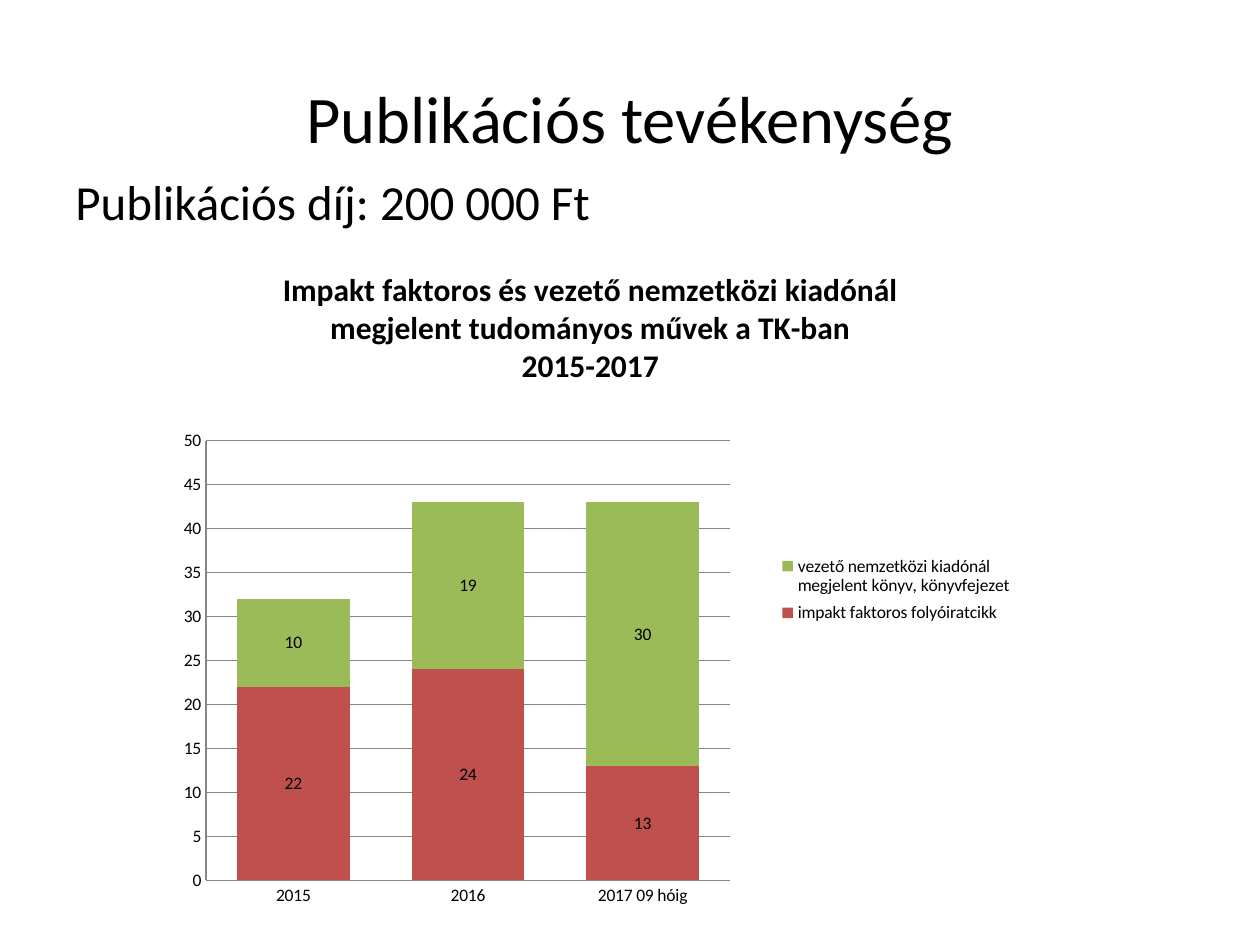
from lxml import etree
from pptx import Presentation
from pptx.chart.data import CategoryChartData
from pptx.dml.color import RGBColor
from pptx.enum import chart as ch, text
from pptx.oxml.ns import qn
from pptx.util import Inches, Pt

FONT = "Calibri"
BLACK = RGBColor(0x00, 0x00, 0x00)
GRAY = RGBColor(0x86, 0x86, 0x86)
RED = RGBColor(0xC0, 0x50, 0x4D)
GREEN = RGBColor(0x9B, 0xBB, 0x59)

CATEGORIES = ["2015", "2016", "2017 09 hóig"]
SERIES = [
    ("impakt faktoros folyóiratcikk", (22, 24, 13), RED),
    ("vezető nemzetközi kiadónál megjelent könyv, könyvfejezet", (10, 19, 30), GREEN),
]
CHART_TITLE = [
    "Impakt faktoros és vezető nemzetközi kiadónál megjelent tudományos művek a TK-ban",
    "2015-2017",
]


def style_font(font, size, bold=False):
    font.name = FONT
    font.size = Pt(size)
    font.bold = bold
    font.color.rgb = BLACK


def add_text(slide, box, words, size, align, anchor):
    tf = slide.shapes.add_textbox(*map(Inches, box)).text_frame
    tf.word_wrap = True
    tf.vertical_anchor = anchor
    p = tf.paragraphs[0]
    p.text = words
    p.alignment = align
    style_font(p.font, size)


def manual_layout(x, y, w, h, inner=False):
    """Return a c:layout element with fractions of the chart area."""
    layout = etree.Element(qn("c:layout"))
    manual = etree.SubElement(layout, qn("c:manualLayout"))
    values = [("layoutTarget", "inner")] if inner else []
    values += [("xMode", "edge"), ("yMode", "edge"),
               ("x", x), ("y", y), ("w", w), ("h", h)]
    for tag, value in values:
        etree.SubElement(manual, qn(f"c:{tag}")).set("val", str(value))
    return layout


def set_chart_title(chart):
    tf = chart.chart_title.text_frame
    chart.chart_title.include_in_layout = False
    for i, line in enumerate(CHART_TITLE):
        p = tf.paragraphs[0] if i == 0 else tf.add_paragraph()
        p.text = line
        style_font(p.font, 18, bold=True)


def style_axes(chart):
    value_axis = chart.value_axis
    value_axis.minimum_scale, value_axis.maximum_scale = 0, 50
    value_axis.major_unit = 5
    value_axis.has_major_gridlines = True
    for axis in (chart.category_axis, value_axis):
        axis.major_tick_mark = ch.XL_TICK_MARK.NONE
        axis.format.line.color.rgb = GRAY
    value_axis.major_gridlines.format.line.color.rgb = GRAY


def style_series(plot):
    plot.gap_width = 55
    plot.overlap = 100
    plot.vary_by_categories = False
    for series, (_, _, color) in zip(plot.series, SERIES):
        series.format.fill.solid()
        series.format.fill.fore_color.rgb = color
        labels = series.data_labels
        labels.show_value = True
        labels.position = ch.XL_LABEL_POSITION.CENTER
        style_font(labels.font, 10)


def place_parts(chart):
    area = chart.plots[0]._element.getparent()
    for old in area.findall(qn("c:layout")):
        area.remove(old)
    area.insert(0, manual_layout(0.06, 0.29, 0.6, 0.65, inner=True))
    legend = chart.legend._element
    for old in legend.findall(qn("c:layout")):
        legend.remove(old)
    legend.find(qn("c:legendPos")).addnext(manual_layout(0.71, 0.45, 0.28, 0.12))


def add_publication_chart(slide):
    data = CategoryChartData()
    data.categories = CATEGORIES
    for name, values, _ in SERIES:
        data.add_series(name, values)
    box = map(Inches, (1.22, 1.94, 6.93, 5.37))
    chart = slide.shapes.add_chart(ch.XL_CHART_TYPE.COLUMN_STACKED, *box, data).chart
    style_font(chart.font, 10)
    set_chart_title(chart)
    style_axes(chart)
    style_series(chart.plots[0])
    chart.has_legend = True
    chart.legend.position = ch.XL_LEGEND_POSITION.RIGHT
    chart.legend.include_in_layout = False
    place_parts(chart)


def main():
    prs = Presentation()
    prs.slide_width, prs.slide_height = Inches(10), Inches(7.5)
    slide = prs.slides.add_slide(prs.slide_layouts[6])
    add_text(slide, (0.5, 0.3, 9, 1.25), "Publikációs tevékenység", 38,
             text.PP_ALIGN.CENTER, text.MSO_ANCHOR.MIDDLE)
    add_text(slide, (0.5, 1.31, 9, 5.39), "Publikációs díj: 200 000 Ft", 28,
             text.PP_ALIGN.LEFT, text.MSO_ANCHOR.TOP)
    add_publication_chart(slide)
    prs.save("out.pptx")


if __name__ == "__main__":
    main()
